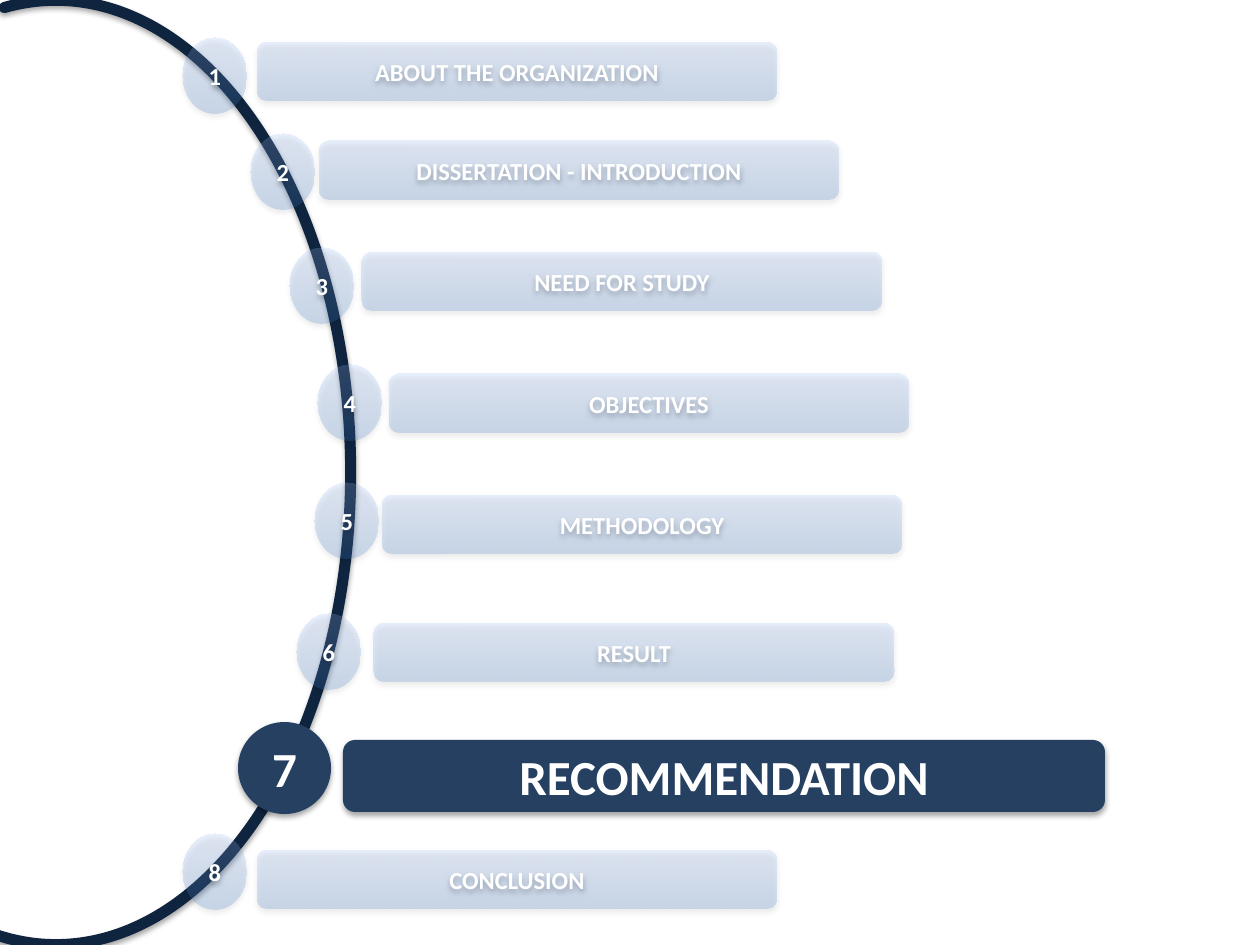
from lxml.etree import SubElement
from pptx import Presentation
from pptx.dml.color import RGBColor
from pptx.enum.shapes import MSO_SHAPE
from pptx.enum.text import MSO_ANCHOR, PP_ALIGN
from pptx.oxml.ns import qn
from pptx.util import Emu, Pt

EMU_PER_PX = 914400 / 126
COLORS = {
    "arc": "0F243E",
    "active": "254061",
    "low": "3F80CE",
    "high": "A4C4FF",
    "text": "FFFFFF",
    "shadow": "000000",
}
FADED_ALPHA = 22
DISC, ACTIVE_DISC = (64, 76), (93, 92)
BAR, ACTIVE_BAR = (520, 59), (762, 72)
ACTIVE_NUMBER = 7
CHAPTERS = [
    ("ABOUT THE ORGANIZATION", (183, 38), (257, 42)),
    ("DISSERTATION - INTRODUCTION", (251, 134), (319, 141)),
    ("NEED FOR STUDY", (290, 248), (362, 252)),
    ("OBJECTIVES", (318, 365), (389, 374)),
    ("METHODOLOGY", (315, 483), (382, 495)),
    ("RESULT", (297, 614), (374, 623)),
    ("RECOMMENDATION", (238, 722), (343, 740)),
    ("CONCLUSION", (183, 834), (257, 850)),
]


def px(length):
    return Emu(round(length * EMU_PER_PX))


def rgb(name):
    return RGBColor.from_string(COLORS[name])


def set_alpha(color, percent):
    SubElement(color, qn("a:alpha"), val=str(percent * 1000))


def add_shadow(shape):
    shape.shadow.inherit = False
    effects = shape._element.spPr.find(qn("a:effectLst"))
    shadow = SubElement(effects, qn("a:outerShdw"), blurRad="40000", dist="23000",
                        dir="5400000", rotWithShape="0")
    set_alpha(SubElement(shadow, qn("a:srgbClr"), val=COLORS["shadow"]), 35)


def fill_gradient(shape, alpha=None):
    shape.fill.gradient()
    shape.fill.gradient_angle = 90
    for stop, name in zip(shape.fill.gradient_stops, ("low", "high")):
        stop.color.rgb = rgb(name)
    if alpha is not None:
        for color in shape._element.spPr.find(qn("a:gradFill")).iter(qn("a:srgbClr")):
            set_alpha(color, alpha)


def add_box(slide, preset, corner, size):
    shape = slide.shapes.add_shape(preset, *map(px, (*corner, *size)))
    add_shadow(shape)
    return shape


def draw_arc(slide, corner, size):
    arc = add_box(slide, MSO_SHAPE.BLOCK_ARC, corner, size)
    for index, value in enumerate((158.168, 58.475, 0.001)):
        arc.adjustments[index] = value
    fill_gradient(arc)
    arc.line.color.rgb = rgb("arc")
    arc.line.width = Pt(6)


def draw_label(slide, preset, corner, size, text, active):
    label = add_box(slide, preset, corner, size)
    label.line.fill.background()
    if active:
        label.fill.solid()
        label.fill.fore_color.rgb = rgb("active")
    else:
        fill_gradient(label, FADED_ALPHA)
    frame = label.text_frame
    frame.margin_left = frame.margin_right = frame.margin_top = frame.margin_bottom = 0
    frame.vertical_anchor = MSO_ANCHOR.MIDDLE
    paragraph = frame.paragraphs[0]
    paragraph.text = text
    paragraph.alignment = PP_ALIGN.CENTER
    paragraph.font.name = "Calibri"
    paragraph.font.size = Pt(28 if active else 14)
    paragraph.font.bold = True
    paragraph.font.color.rgb = rgb("text")


def draw_chapter(slide, number, title, disc_corner, bar_corner):
    active = number == ACTIVE_NUMBER
    draw_label(slide, MSO_SHAPE.OVAL, disc_corner,
               ACTIVE_DISC if active else DISC, str(number), active)
    draw_label(slide, MSO_SHAPE.ROUNDED_RECTANGLE, bar_corner,
               ACTIVE_BAR if active else BAR, title, active)


def main():
    deck = Presentation()
    deck.slide_width, deck.slide_height = px(1260), px(945)
    slide = deck.slides.add_slide(deck.slide_layouts[6])
    draw_arc(slide, (-239, 0), (590, 945))
    for number, chapter in enumerate(CHAPTERS, start=1):
        draw_chapter(slide, number, *chapter)
    deck.save("out.pptx")


if __name__ == "__main__":
    main()
